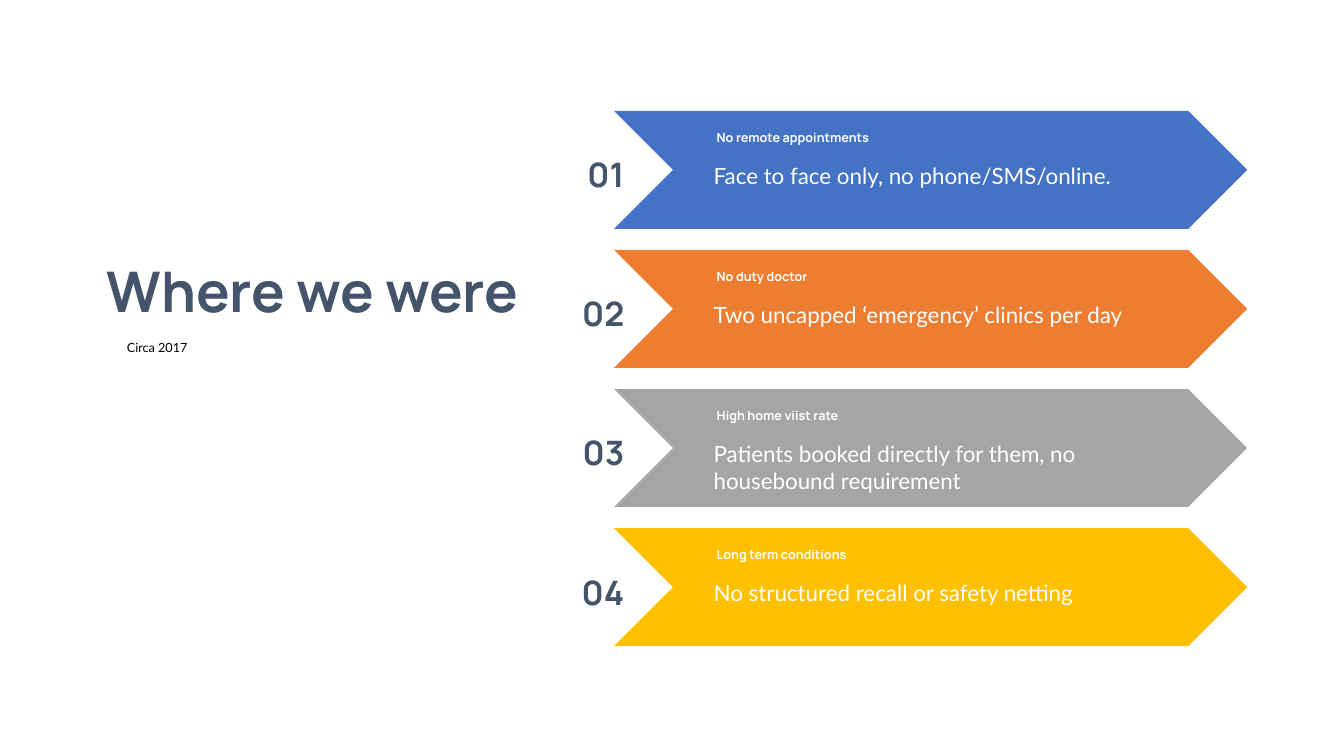
from dataclasses import dataclass
from pptx import Presentation
from pptx.dml.color import RGBColor as RGB
from pptx.enum.shapes import MSO_SHAPE as Shape
from pptx.enum.text import MSO_AUTO_SIZE as Fit, PP_ALIGN as Align
from pptx.util import Inches, Pt


@dataclass(frozen=True)
class Theme:
    head: str = "Manrope"
    body: str = "Lato"
    navy: str = "44546A"
    black: str = "000000"
    white: str = "FFFFFF"
    bands: tuple = ("4472C4", "ED7D31", "A5A5A5", "FFC000")
    title: int = 40
    number: int = 24
    text: int = 16
    small: int = 9


class Deck:
    def __init__(self, theme):
        self.theme = theme
        self.prs = Presentation()
        self.prs.slide_width = Inches(13.33)
        self.prs.slide_height = Inches(7.5)
        self.slide = self.prs.slides.add_slide(self.prs.slide_layouts[6])

    def label(self, text, box, size, color, bold=False, align=Align.LEFT):
        """Add a text box; bold text takes the heading font."""
        frame = self.slide.shapes.add_textbox(*map(Inches, box)).text_frame
        frame.word_wrap = True
        frame.auto_size = Fit.SHAPE_TO_FIT_TEXT
        para = frame.paragraphs[0]
        para.text = text
        para.alignment = align
        font = para.font
        font.name = self.theme.head if bold else self.theme.body
        font.size = Pt(size)
        font.bold = bold
        font.color.rgb = RGB.from_string(color)

    def arrow(self, box, color):
        """Add a plain chevron band."""
        band = self.slide.shapes.add_shape(Shape.CHEVRON, *map(Inches, box))
        band.shadow.inherit = False
        band.fill.solid()
        band.fill.fore_color.rgb = RGB.from_string(color)
        band.line.fill.background()


# Heading, detail, and the width and height of the detail box
ROWS = [
    ("No remote appointments", "Face to face only, no phone/SMS/online.", 4.52, 0.37),
    ("No duty doctor", "Two uncapped ‘emergency’ clinics per day", 4.52, 0.37),
    ("High home viist rate",
     "Patients booked directly for them, no housebound requirement", 4.96, 0.64),
    ("Long term conditions", "No structured recall or safety netting", 4.81, 0.37),
]
TOP, PITCH = 1.1, 1.38


def main():
    theme = Theme()
    deck = Deck(theme)

    # Title and date
    deck.label("Where we were", (0.96, 2.5, 4.65, 0.77), theme.title, theme.navy, bold=True)
    deck.label("Circa 2017", (1.16, 3.32, 3.04, 0.25), theme.small, theme.black)

    # Numbered bands
    for i, (head, text, wide, high) in enumerate(ROWS):
        top = TOP + i * PITCH
        deck.arrow((6.09, top, 6.28, 1.17), theme.bands[i])
        deck.label(head, (7.01, top + 0.14, 3.59, 0.25), theme.small, theme.white, bold=True)
        deck.label(text, (6.98, top + 0.46, wide, high), theme.text, theme.white)
        deck.label(f"{i + 1:02}", (5.35, top + 0.38, 0.94, 0.5), theme.number,
                   theme.navy, bold=True, align=Align.RIGHT)

    deck.prs.save("out.pptx")


if __name__ == "__main__":
    main()
